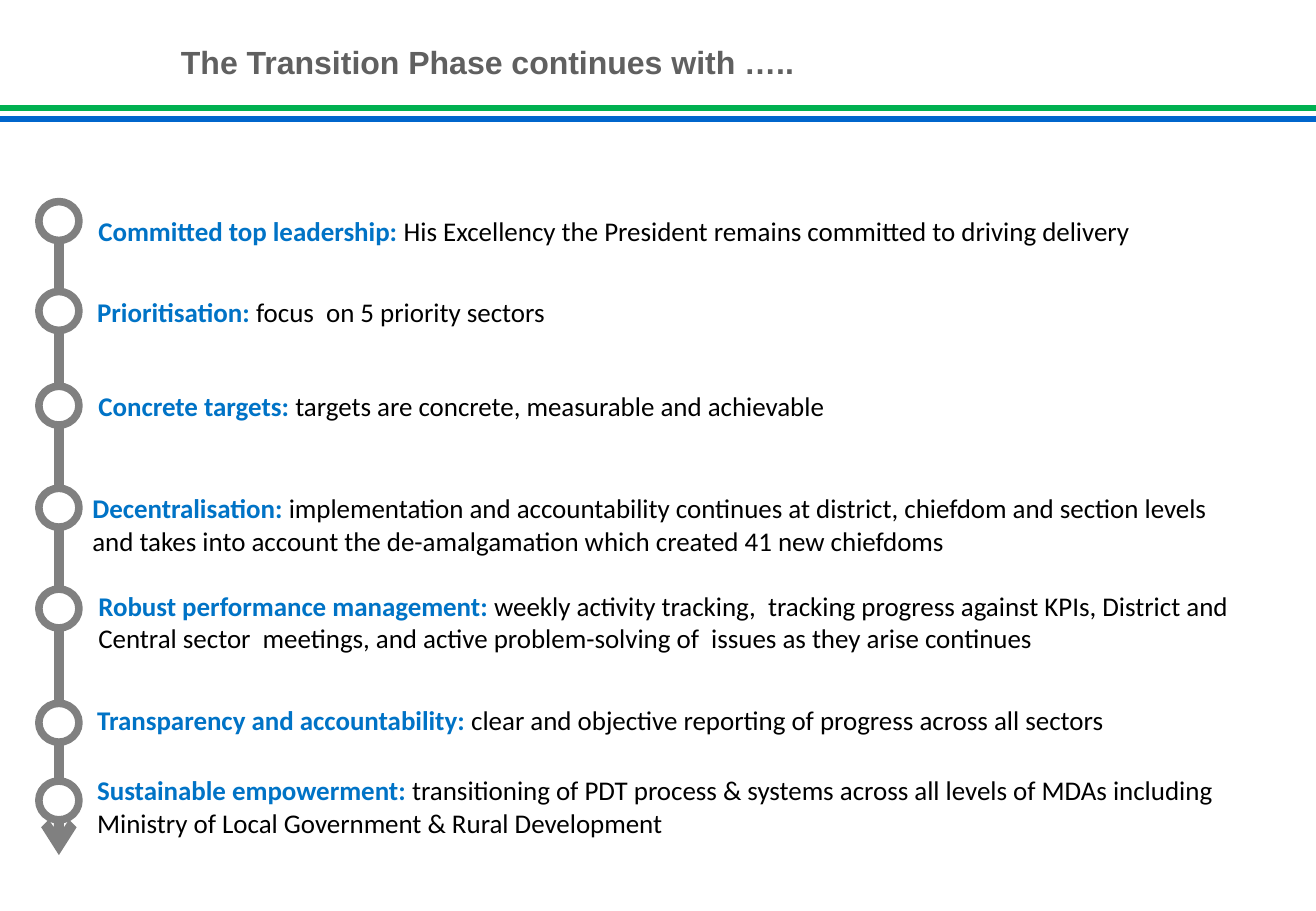
from dataclasses import dataclass

from lxml import etree
from pptx import Presentation
from pptx.dml.color import RGBColor
from pptx.enum.shapes import MSO_CONNECTOR, MSO_SHAPE
from pptx.enum.text import MSO_ANCHOR, PP_ALIGN
from pptx.oxml.ns import qn
from pptx.util import Inches, Pt

STRAIGHT = MSO_CONNECTOR.STRAIGHT
OVAL = MSO_SHAPE.OVAL
TOP, BOTTOM = MSO_ANCHOR.TOP, MSO_ANCHOR.BOTTOM
LEFT = PP_ALIGN.LEFT

SLIDE_WIDTH, SLIDE_HEIGHT = 10.83, 7.5
COLUMNS, ROWS = 130, 90


@dataclass(frozen=True)
class Theme:
    title_color: str = "606060"
    label_color: str = "0073C6"
    body_color: str = "000000"
    green: str = "00B050"
    blue: str = "0066CC"
    grey: str = "808080"
    white: str = "FFFFFF"
    title_font: str = "Arial"
    body_font: str = "Calibri"
    title_size: float = 19
    body_size: float = 16
    rule_width: float = 3.75
    spine_width: float = 6
    ring_width: float = 4.5


def across(columns):
    return Inches(columns * SLIDE_WIDTH / COLUMNS)


def down(rows):
    return Inches(rows * SLIDE_HEIGHT / ROWS)


def add_run(paragraph, text, *, font, size, color, bold=False):
    run = paragraph.add_run()
    run.text = text
    run.font.name = font
    run.font.size = Pt(size)
    run.font.bold = bold
    run.font.color.rgb = RGBColor.from_string(color)


class SlideBuilder:
    """Draws elements on one slide; positions are grid columns and rows."""

    def __init__(self, slide, theme):
        self.slide = slide
        self.theme = theme

    def line(self, start, end, color, width, arrow=False):
        connector = self.slide.shapes.add_connector(
            STRAIGHT, across(start[0]), down(start[1]), across(end[0]), down(end[1]))
        connector.line.color.rgb = RGBColor.from_string(color)
        connector.line.width = Pt(width)
        if arrow:
            etree.SubElement(connector.line._get_or_add_ln(), qn("a:tailEnd"), type="arrow")
        etree.SubElement(connector._element.spPr, qn("a:effectLst"))

    def ring(self, left, top, width, height):
        shape = self.slide.shapes.add_shape(
            OVAL, across(left), down(top), across(width), down(height))
        shape.shadow.inherit = False
        shape.fill.solid()
        shape.fill.fore_color.rgb = RGBColor.from_string(self.theme.white)
        shape.line.color.rgb = RGBColor.from_string(self.theme.grey)
        shape.line.width = Pt(self.theme.ring_width)

    def text_box(self, left, top, width, height, anchor=TOP):
        """Add an empty box without margins and return its first paragraph."""
        box = self.slide.shapes.add_textbox(
            across(left), down(top), across(width), down(height))
        frame = box.text_frame
        frame.word_wrap = True
        frame.vertical_anchor = anchor
        frame.margin_left = frame.margin_right = 0
        frame.margin_top = frame.margin_bottom = 0
        paragraph = frame.paragraphs[0]
        paragraph.alignment = LEFT
        return paragraph

    def title(self, text):
        theme = self.theme
        paragraph = self.text_box(17.88, 4.2, 109.8, 3.84, BOTTOM)
        add_run(paragraph, text, font=theme.title_font, size=theme.title_size,
                color=theme.title_color, bold=True)

    def statement(self, left, top, width, line_count, label, detail):
        theme = self.theme
        paragraph = self.text_box(left, top, width, line_count * LINE_ROWS)
        style = {"font": theme.body_font, "size": theme.body_size}
        add_run(paragraph, label + " ", color=theme.label_color, bold=True, **style)
        add_run(paragraph, detail, color=theme.body_color, **style)


LINE_ROWS = 3.24
RING_LEFT, RING_WIDTH, RING_HEIGHT = 3.84, 3.96, 3.84
SPINE_COLUMN = RING_LEFT + RING_WIDTH / 2
SPINE_TOP, SPINE_END = 23.76, 84.48

# Ring row, text column, text row, text width, lines, label, detail
MILESTONES = [
    (19.92, 9.72, 21.24, 107.5, 1, "Committed top leadership:",
     "His Excellency the President remains committed to driving delivery"),
    (28.8, 9.6, 29.16, 84.8, 1, "Prioritisation:", "focus  on 5 priority sectors"),
    (38.16, 9.72, 38.52, 110.6, 1, "Concrete targets:",
     "targets are concrete, measurable and achievable"),
    (48.24, 9.12, 48.6, 113, 2, "Decentralisation:",
     "implementation and accountability continues at district, chiefdom and section levels "
     "and takes into account the de-amalgamation which created 41 new chiefdoms"),
    (58.2, 9.72, 58.2, 113, 2, "Robust performance management:",
     "weekly activity tracking,  tracking progress against KPIs, District and Central sector  "
     "meetings, and active problem-solving of  issues as they arise continues"),
    (69.48, 9.6, 69.48, 107.5, 1, "Transparency and accountability:",
     "clear and objective reporting of progress across all sectors"),
    (77.16, 9.6, 76.44, 113, 2, "Sustainable empowerment:",
     "transitioning of PDT process & systems across all levels of MDAs including "
     "Ministry of Local Government & Rural Development"),
]


def main():
    presentation = Presentation()
    presentation.slide_width = Inches(SLIDE_WIDTH)
    presentation.slide_height = Inches(SLIDE_HEIGHT)
    slide = presentation.slides.add_slide(presentation.slide_layouts[6])
    theme = Theme()
    builder = SlideBuilder(slide, theme)

    for row, color in ((10.68, theme.green), (11.76, theme.blue)):
        builder.line((0, row), (COLUMNS, row), color, theme.rule_width)
    builder.title("The Transition Phase continues with …..")

    builder.line((SPINE_COLUMN, SPINE_TOP), (SPINE_COLUMN, SPINE_END),
                 theme.grey, theme.spine_width, arrow=True)
    for ring_row, *statement in MILESTONES:
        builder.ring(RING_LEFT, ring_row, RING_WIDTH, RING_HEIGHT)
        builder.statement(*statement)

    presentation.save("out.pptx")


if __name__ == "__main__":
    main()
